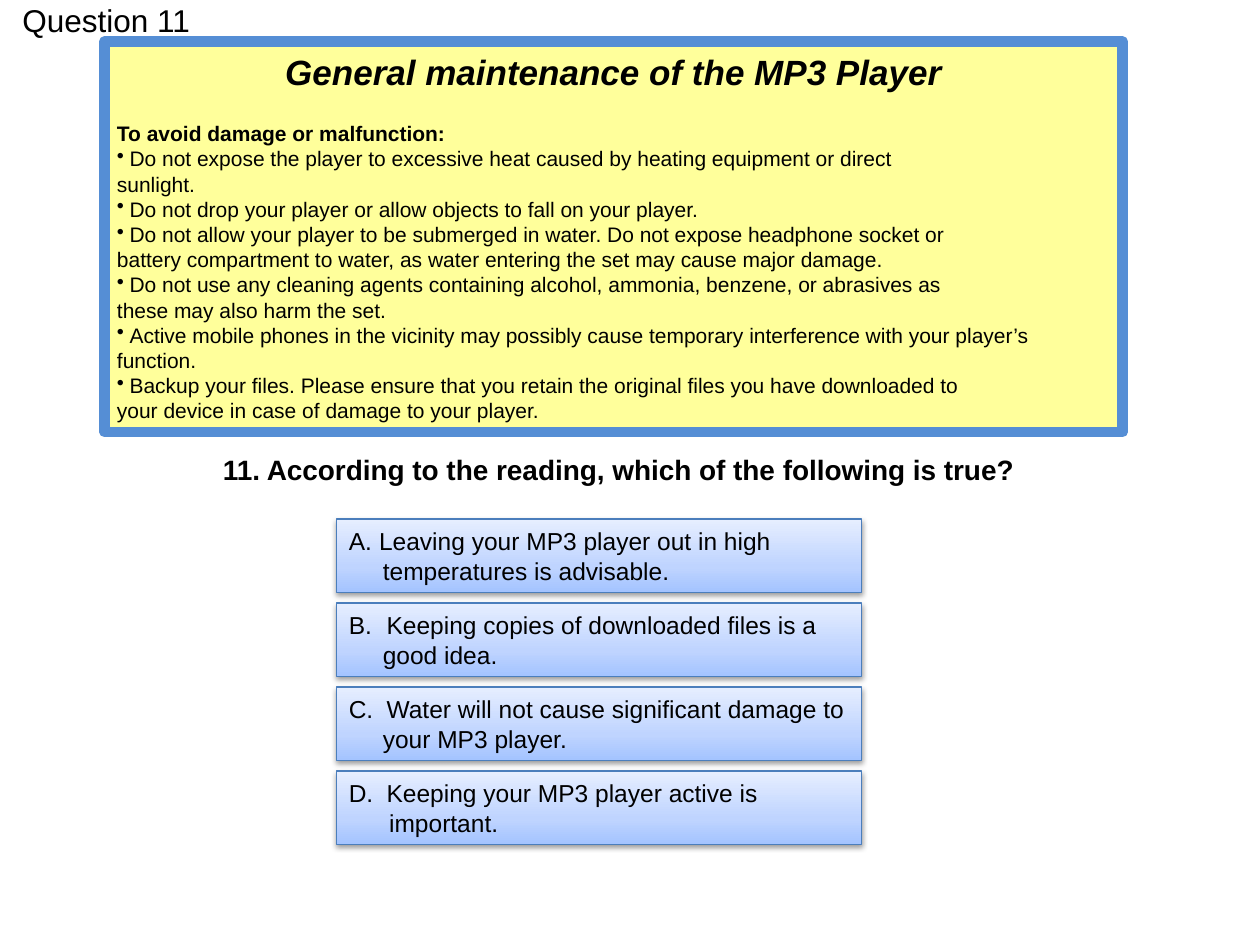
from copy import deepcopy
from dataclasses import dataclass

from lxml import etree
from pptx import Presentation
from pptx import util as u
from pptx.dml.color import RGBColor
from pptx.enum import shapes, text
from pptx.oxml import ns

BLACK = RGBColor(0x00, 0x00, 0x00)
YELLOW = RGBColor(0xFF, 0xFF, 0x99)
FRAME_BLUE = RGBColor(0x55, 0x8E, 0xD5)
BUTTON_EDGE = RGBColor(0x4B, 0x7E, 0xBC)
BUTTON_STOPS = [
    (0, RGBColor(0xA4, 0xC4, 0xFF)),
    (0.35, RGBColor(0xBF, 0xD4, 0xFF)),
    (1, RGBColor(0xE6, 0xEE, 0xFF)),
]
FONT = "Arial"


@dataclass
class Advice:
    lead: str
    rest: str = ""


@dataclass
class Option:
    label: str
    lead: str
    rest: str
    tab: float = 0.3
    indent: float = 0.27


ADVICE = [
    Advice("Do not expose the player to excessive heat caused by heating equipment or direct",
           "sunlight."),
    Advice("Do not drop your player or allow objects to fall on your player."),
    Advice("Do not allow your player to be submerged in water. Do not expose headphone socket or",
           "battery compartment to water, as water entering the set may cause major damage."),
    Advice("Do not use any cleaning agents containing alcohol, ammonia, benzene, or abrasives as",
           "these may also harm the set."),
    Advice("Active mobile phones in the vicinity may possibly cause temporary interference "
           "with your player’s", "function."),
    Advice("Backup your files. Please ensure that you retain the original files you have "
           "downloaded to", "your device in case of damage to your player."),
]
OPTIONS = [
    Option("A.", "Leaving your MP3 player out in high", "temperatures is advisable.", tab=0.24),
    Option("B.", "Keeping copies of downloaded files is a", "good idea."),
    Option("C.", "Water will not cause significant damage to", "your MP3 player."),
    Option("D.", "Keeping your MP3 player active is", "important.", indent=0.32),
]


def add_xml(parent, tag: str, **attrs):
    return etree.SubElement(parent, ns.qn(tag), {k: str(v) for k, v in attrs.items()})


def style(p, size: float, bold: bool = False, italic: bool = False) -> None:
    p.alignment = p.alignment or text.PP_ALIGN.LEFT
    for r in p.runs:
        r.font.name, r.font.size = FONT, u.Pt(size)
        r.font.bold, r.font.italic = bold, italic
        r.font.color.rgb = BLACK


def add_line(tf, words: str, size: float):
    p = tf.add_paragraph()
    p.text = words
    style(p, size)
    return p


def set_indent(p, left: float, first: float = 0) -> None:
    pPr = p._p.get_or_add_pPr()
    pPr.set("marL", str(u.Inches(left)))
    pPr.set("indent", str(u.Inches(first)))


def add_label(s, x: float, y: float, w: float, h: float, words: str,
              size: float, bold: bool = False) -> None:
    tf = s.shapes.add_textbox(u.Inches(x), u.Inches(y), u.Inches(w), u.Inches(h)).text_frame
    tf.word_wrap = True
    tf.text = words
    style(tf.paragraphs[0], size, bold)


def add_panel(s) -> None:
    sp = s.shapes.add_shape(shapes.MSO_SHAPE.RECTANGLE, u.Inches(0.83), u.Inches(0.33),
                            u.Inches(8.08), u.Inches(3.1))
    sp.shadow.inherit = False
    sp.fill.solid()
    sp.fill.fore_color.rgb = YELLOW
    color = sp.element.spPr.find(ns.qn("a:solidFill"))[0]
    add_xml(color, "a:alpha", val=98000)
    sp.line.color.rgb, sp.line.width = FRAME_BLUE, u.Pt(6)

    tf = sp.text_frame
    tf.word_wrap = True
    tf.text = "General maintenance of the MP3 Player"
    tf.paragraphs[0].alignment = text.PP_ALIGN.CENTER
    style(tf.paragraphs[0], 20, bold=True, italic=True)
    p = add_line(tf, "To avoid damage or malfunction:", 12)
    p.space_before = u.Pt(16)
    p.runs[0].font.bold = True

    for advice in ADVICE:
        p = add_line(tf, advice.lead, 12)
        set_indent(p, 0.1, -0.1)
        add_xml(p._p.get_or_add_pPr(), "a:buChar", char="•")
        if advice.rest:
            add_line(tf, advice.rest, 12)


def add_option(s, y: float, option: Option) -> None:
    sp = s.shapes.add_shape(shapes.MSO_SHAPE.ACTION_BUTTON_CUSTOM, u.Inches(2.67),
                            u.Inches(y), u.Inches(4.17), u.Inches(0.58))
    # Three-stop gradient, light at the top
    sp.fill.gradient()
    sp.fill.gradient_angle = 90
    stops = sp.element.spPr.find(ns.qn("a:gradFill")).find(ns.qn("a:gsLst"))
    stops.append(deepcopy(stops[0]))
    for stop, (position, color) in zip(sp.fill.gradient_stops, BUTTON_STOPS):
        stop.position, stop.color.rgb = position, color
    sp.line.color.rgb, sp.line.width = BUTTON_EDGE, u.Pt(0.75)

    # Soft shadow below
    sp.shadow.inherit = False
    effects = sp.element.spPr.find(ns.qn("a:effectLst"))
    shadow = add_xml(effects, "a:outerShdw", blurRad=u.Pt(3.1), dist=u.Pt(1.6),
                     dir=5400000, rotWithShape=0)
    add_xml(add_xml(shadow, "a:srgbClr", val="000000"), "a:alpha", val=38000)

    tf = sp.text_frame
    tf.word_wrap = True
    tf.margin_right = u.Inches(0.02)
    tf.vertical_anchor = text.MSO_ANCHOR.MIDDLE
    tf.text = f"{option.label}\t{option.lead}"
    p = tf.paragraphs[0]
    tabs = add_xml(p._p.get_or_add_pPr(), "a:tabLst")
    add_xml(tabs, "a:tab", pos=u.Inches(option.tab), algn="l")
    style(p, 14)
    set_indent(add_line(tf, option.rest, 14), option.indent)


def main() -> None:
    prs = Presentation()
    prs.slide_width, prs.slide_height = u.Inches(10), u.Inches(7.5)
    s = prs.slides.add_slide(prs.slide_layouts[6])

    # Heading, reading passage and question
    add_label(s, 0.08, -0.04, 2.33, 0.4, "Question 11", 18)
    add_panel(s)
    add_label(s, 1.67, 3.54, 8, 0.37,
              "11. According to the reading, which of the following is true?", 16, bold=True)

    # Answer buttons
    for i, option in enumerate(OPTIONS):
        add_option(s, 4.12 + i * 2 / 3, option)

    prs.save("out.pptx")


if __name__ == "__main__":
    main()
